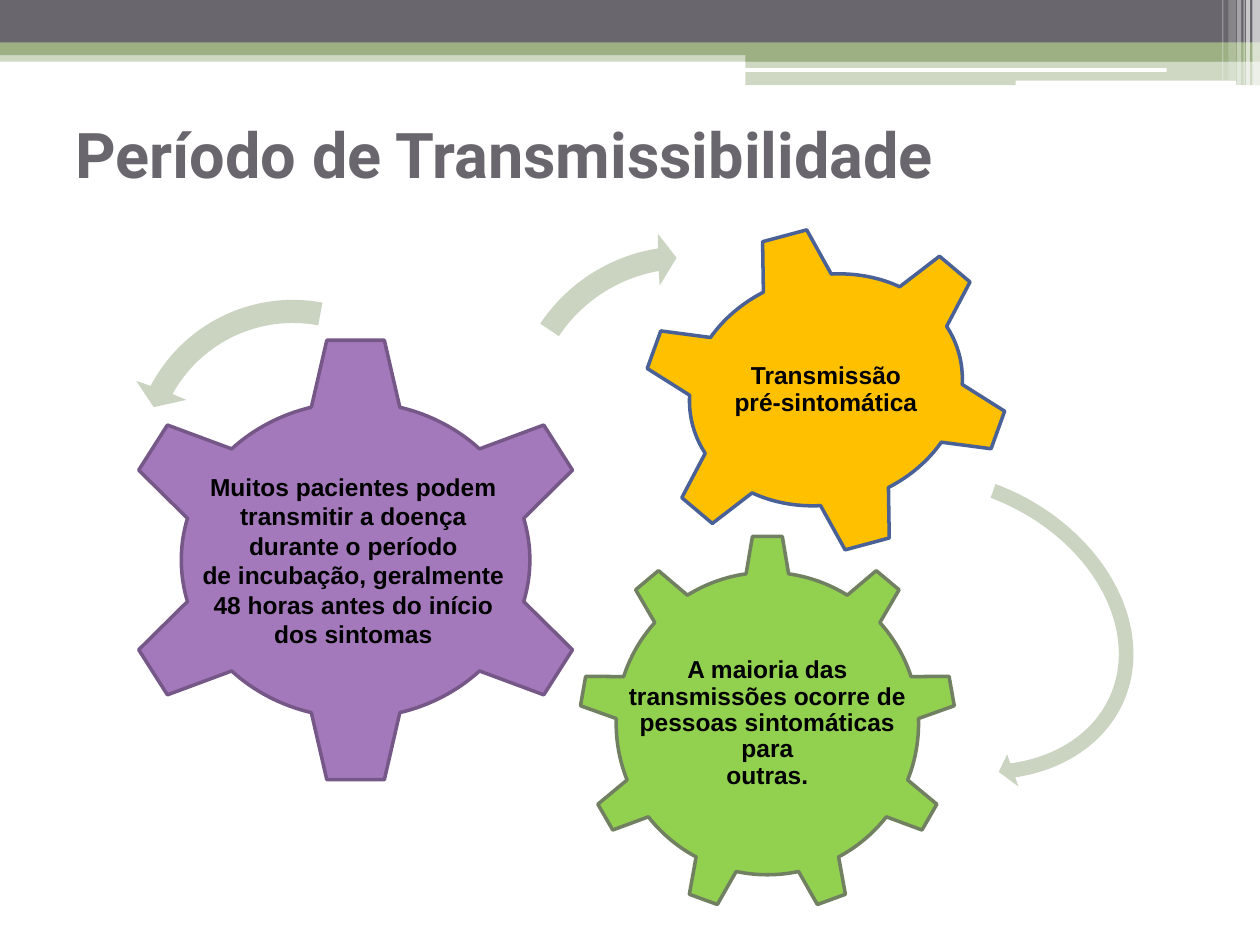
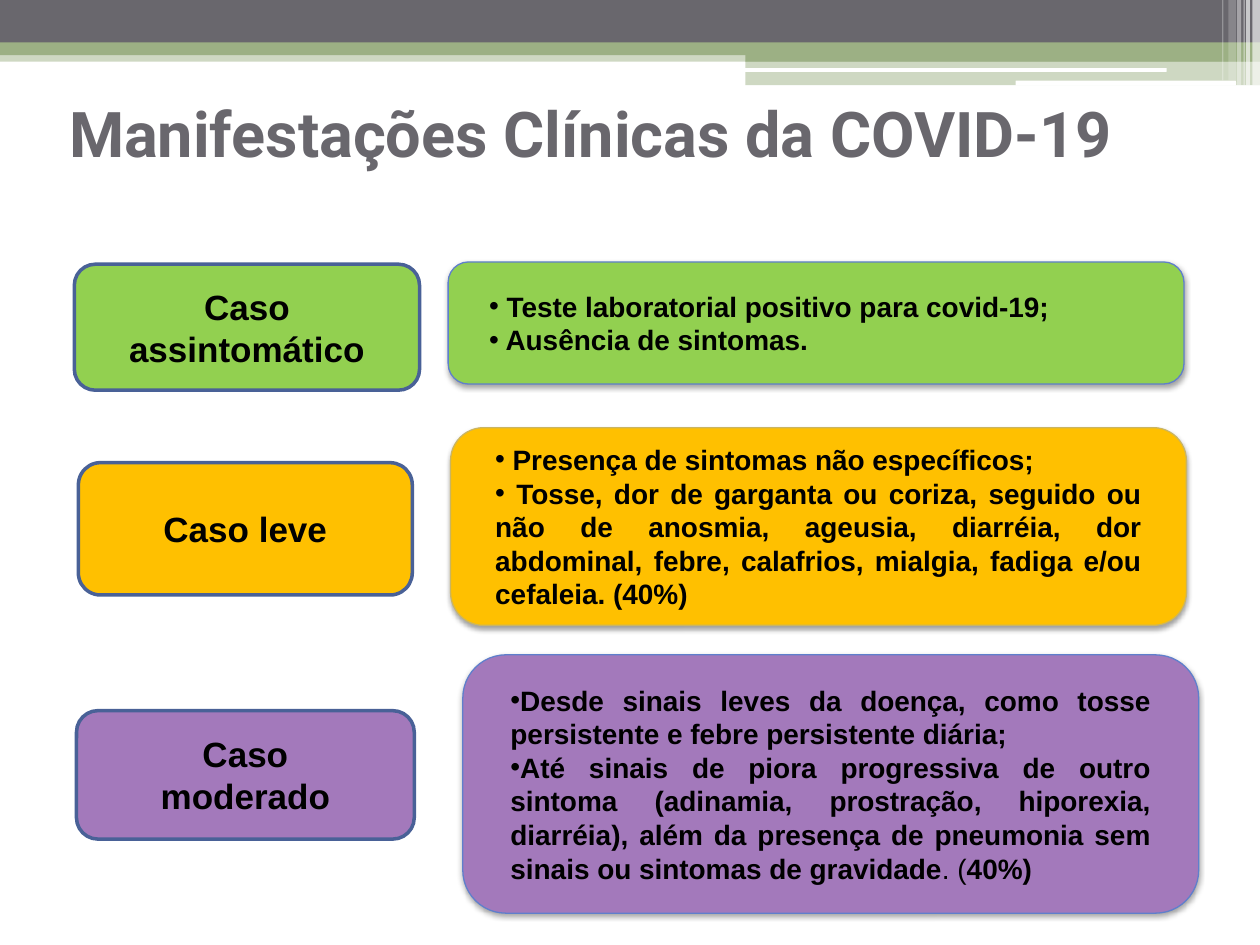
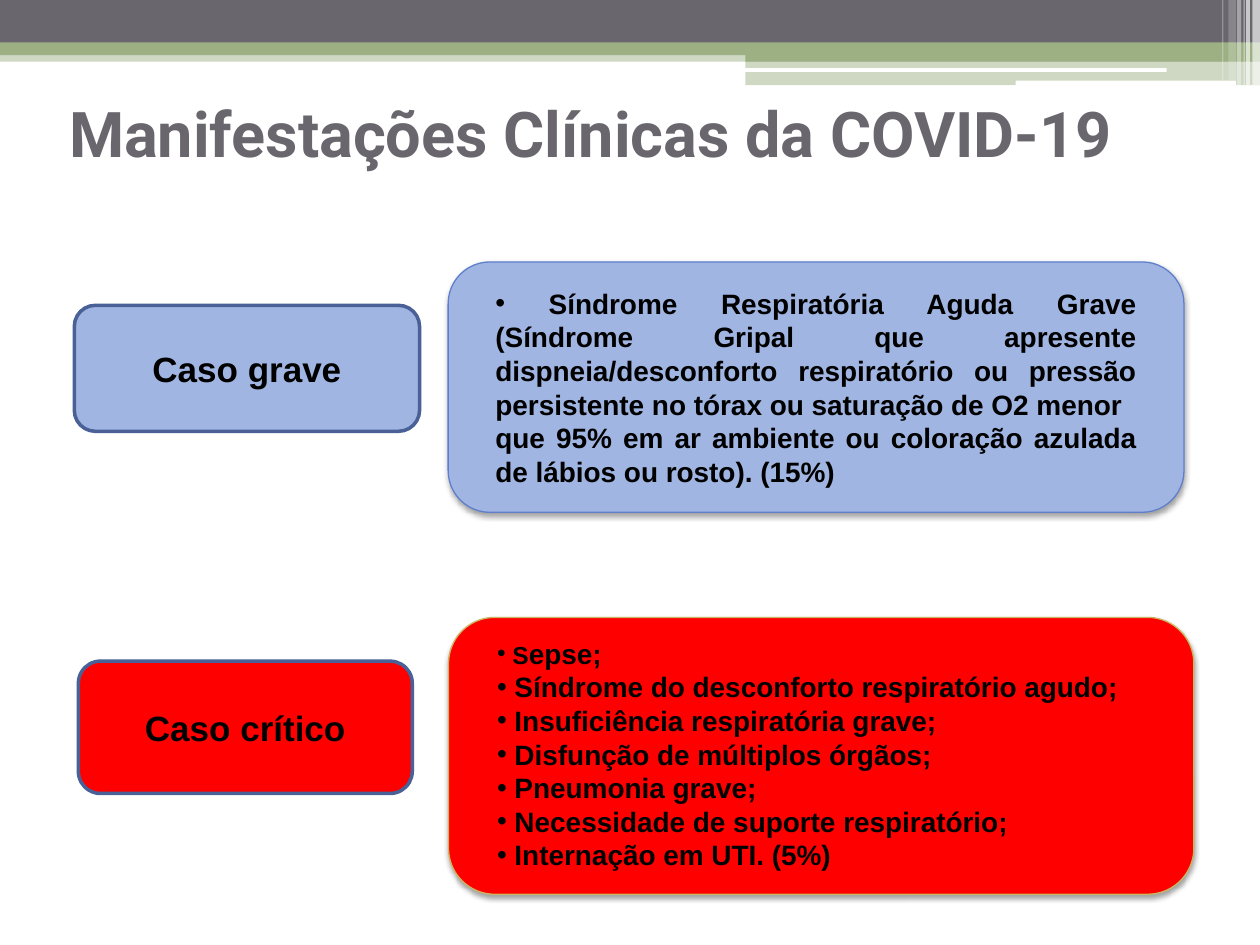
"""Build three slides on COVID-19 transmissibility and clinical manifestations."""
from math import ceil, cos, hypot, radians, sin, tan

from lxml import etree
from pptx import Presentation
from pptx.dml.color import RGBColor
from pptx.enum.shapes import MSO_SHAPE
from pptx.enum.text import MSO_ANCHOR, PP_ALIGN
from pptx.oxml.ns import qn
from pptx.util import Pt

RECTANGLE = MSO_SHAPE.RECTANGLE
ROUNDED = MSO_SHAPE.ROUNDED_RECTANGLE
MIDDLE = MSO_ANCHOR.MIDDLE
LEFT, CENTER, JUSTIFY = PP_ALIGN.LEFT, PP_ALIGN.CENTER, PP_ALIGN.JUSTIFY

BLACK = RGBColor(0x00, 0x00, 0x00)
WHITE = RGBColor(0xFF, 0xFF, 0xFF)
GRAY = RGBColor(0x69, 0x67, 0x6D)
SAGE = RGBColor(0x9C, 0xB0, 0x84)
PALE_SAGE = RGBColor(0xCB, 0xD4, 0xC1)
GREEN = RGBColor(0x92, 0xD0, 0x50)
DARK_GREEN = RGBColor(0x71, 0x80, 0x60)
PURPLE = RGBColor(0xA3, 0x79, 0xBB)
DARK_PURPLE = RGBColor(0x76, 0x58, 0x88)
AMBER = RGBColor(0xFF, 0xC0, 0x00)
RED = RGBColor(0xFF, 0x00, 0x00)
LIGHT_BLUE = RGBColor(0xA0, 0xB5, 0xE2)
NAVY = RGBColor(0x49, 0x61, 0x97)
BLUE = RGBColor(0x5F, 0x7F, 0xCC)
SAND = RGBColor(0xCB, 0xB5, 0x60)

TITLE_FONT, BODY_FONT = "Roboto", "Arial"


def paint(shape, fill, line=None, width=2, opacity=100):
    """Give a shape its fill, outline and opacity, without a shadow."""
    shape.shadow.inherit = False
    shape.fill.solid()
    shape.fill.fore_color.rgb = fill
    if opacity < 100:
        color = shape.element.spPr.find(qn("a:solidFill"))[0]
        etree.SubElement(color, qn("a:alpha"), val=str(opacity * 1000))
    if line is None:
        shape.line.fill.background()
    else:
        shape.line.color.rgb = line
        shape.line.width = Pt(width)


def write(shape, texts, size, align, inset, font=BODY_FONT, color=BLACK, spacing=1.0):
    """Fill a shape with bold paragraphs; "•" opens a bullet and "|" parts spans."""
    frame = shape.text_frame
    frame.word_wrap = True
    frame.vertical_anchor = MIDDLE
    frame.margin_left = frame.margin_right = Pt(inset[0])
    frame.margin_top = frame.margin_bottom = Pt(inset[1])
    for index, text in enumerate(texts):
        para = frame.add_paragraph() if index else frame.paragraphs[0]
        para.alignment = align
        para.line_spacing = spacing
        if text.startswith("•"):
            properties = para._p.get_or_add_pPr()
            properties.set("marL", "0")
            properties.set("indent", "0")
            bullet_color = etree.SubElement(properties, qn("a:buClr"))
            etree.SubElement(bullet_color, qn("a:srgbClr"), val=str(BLACK))
            etree.SubElement(properties, qn("a:buFont"), typeface=BODY_FONT)
            etree.SubElement(properties, qn("a:buChar"), char="•")
            text = text[1:]
        for part in text.split("|"):
            span = para.add_run()
            span.text = part
            span.font.name = font
            span.font.size = Pt(size)
            span.font.bold = True
            span.font.color.rgb = color
    return frame


deck = Presentation()
deck.slide_width, deck.slide_height = Pt(720), Pt(540)

bands = [
    (RECTANGLE, 0, 28.8, 720, 6.5, SAGE, 49),
    (RECTANGLE, 0, 0, 720, 24.5, GRAY, 100),
    (RECTANGLE, 0, 24.3, 720, 7.2, SAGE, 100),
    (RECTANGLE, 426, 28.1, 294, 7.2, SAGE, 100),
    (RECTANGLE, 426, 34.6, 294, 14.1, SAGE, 49),
    (ROUNDED, 425.5, 38.9, 241.2, 2.2, WHITE, 100),
    (ROUNDED, 580.3, 46.1, 126, 2.9, WHITE, 100),
    (RECTANGLE, 715.7, 0, 4.3, 49, WHITE, 64),
    (RECTANGLE, 712.1, 0, 2.2, 49, WHITE, 64),
    (RECTANGLE, 710.6, 0, 0.7, 49, WHITE, 60),
    (RECTANGLE, 707, 0, 2.2, 49, WHITE, 40),
    (RECTANGLE, 702, 0, 4.3, 46, WHITE, 20),
    (RECTANGLE, 698.4, 0, 0.7, 46, WHITE, 29),
]
titles = [
    ("Período de Transmissibilidade", 36, 60.5, 604.8),
    ("Manifestações Clínicas da COVID-19", 32.4, 48.2, 634.3),
    ("Manifestações Clínicas da COVID-19", 32.4, 48.2, 634.3),
]
pages = []
for title, left, top, width in titles:
    page = deck.slides.add_slide(deck.slide_layouts[6])
    for kind, x, y, band_width, height, fill, opacity in bands:
        band = page.shapes.add_shape(kind, Pt(x), Pt(y), Pt(band_width), Pt(height))
        paint(band, fill, opacity=opacity)
    box = page.shapes.add_textbox(Pt(left), Pt(top), Pt(width), Pt(54.7))
    write(box, [title], 36, LEFT, (7.2, 3.6), TITLE_FONT, GRAY)
    pages.append(page)

outlines = []
gears = [
    (438.5, 413.5, 86.4, 86.4, 21.4, 9, 8.1, 0.7, 0, GREEN, DARK_GREEN),
    (203.2, 320, 99.6, 90.2, 38.3, 6, 14.7, 0.65, 0, PURPLE, DARK_PURPLE),
    (472, 222.8, 78.8, 65.3, 28, 6, 14.75, 0.65, -15, AMBER, NAVY),
]
for x, y, radius_x, radius_y, depth, teeth, spread, taper, turn, fill, line in gears:
    steps = []
    pitch = 360 / teeth
    for tooth in range(teeth):
        middle = tooth * pitch - 90
        first, last = [(radius_x * cos(radians(a)), radius_y * sin(radians(a)))
                       for a in (middle - spread, middle + spread)]
        normal_x = cos(radians(middle)) / radius_x
        normal_y = sin(radians(middle)) / radius_y
        reach = depth / hypot(normal_x, normal_y)
        center_x, center_y = (first[0] + last[0]) / 2, (first[1] + last[1]) / 2
        tips = [(center_x + (px - center_x) * taper + normal_x * reach,
                 center_y + (py - center_y) * taper + normal_y * reach)
                for px, py in (first, last)]
        if tooth == 0:
            steps.append(first)
        steps += [*tips, last,
                  (radius_x, radius_y, middle + spread, middle + pitch - spread)]
    outlines.append((steps, x, y, turn, fill, line))

arrows = [
    (542.9, 356.8, 104.4, 79.9, 4.2, 24.4, -95, 50, 54.8, -0.04),
    (167.4, 263.2, 85.2, 85.2, 6.6, 0, 280.6, 208.3, 201, -0.09),
    (391.3, 240.1, 92.9, 92.9, 6.4, 0, 213.7, 260.6, 267.1, 0.08),
]
for x, y, radius_x, radius_y, half, turn, start, end, tip, lean in arrows:
    wing = 2.3 * half
    rim = [(start, half), (end + lean * wing, wing), (tip, 0),
           (end - lean * wing, -wing), (end - lean * half, -half)]
    steps = [((radius_x + offset) * cos(radians(angle)),
              (radius_y + offset) * sin(radians(angle))) for angle, offset in rim]
    steps.insert(1, (radius_x + half, radius_y + half, start, end + lean * half))
    steps.append((radius_x - half, radius_y - half, end - lean * half, start))
    outlines.append((steps, x, y, turn, PALE_SAGE, None))

for steps, x, y, turn, fill, line in outlines:
    points, curves = [], []
    for step in steps:
        if len(step) == 2:
            points.append(step)
            continue
        radius_x, radius_y, start, end = step
        count = ceil(abs(end - start) / 90)
        sweep = radians(end - start) / count
        pull = 4 / 3 * tan(sweep / 4)
        for part in range(count):
            a = radians(start) + part * sweep
            b = a + sweep
            curves.append(len(points) - 1)
            points += [(radius_x * (cos(a) - pull * sin(a)), radius_y * (sin(a) + pull * cos(a))),
                       (radius_x * (cos(b) + pull * sin(b)), radius_y * (sin(b) - pull * cos(b))),
                       (radius_x * cos(b), radius_y * sin(b))]
    turn_cos, turn_sin = cos(radians(turn)), sin(radians(turn))
    corners = [(Pt(x + px * turn_cos - py * turn_sin), Pt(y + px * turn_sin + py * turn_cos))
               for px, py in points]
    builder = pages[0].shapes.build_freeform(*corners[0])
    builder.add_line_segments(corners[1:])
    shape = builder.convert_to_shape()
    segments = list(shape.element.spPr.iter(qn("a:lnTo")))
    for index in curves:
        curve = etree.Element(qn("a:cubicBezTo"))
        segments[index].addprevious(curve)
        for segment in segments[index:index + 3]:
            curve.append(segment[0])
            segment.getparent().remove(segment)
    paint(shape, fill, line)

gear_texts = [
    (349.2, 305.5, 178.6, 216, 0.9,
     ["A maioria das transmissões ocorre de pessoas sintomáticas para", "outras."]),
    (108.7, 191.2, 186.5, 257.8, 1.0,
     ["Muitos pacientes podem transmitir a doença durante o período",
      "de incubação, geralmente 48 horas antes do início dos sintomas"]),
    (413.7, 168.9, 116.6, 108, 0.9, ["Transmissão pré-sintomática"]),
]
for left, top, width, height, spacing, texts in gear_texts:
    box = pages[0].shapes.add_textbox(Pt(left), Pt(top), Pt(width), Pt(height))
    write(box, texts, 14, CENTER, (1.4, 1.4), spacing=spacing)

cases = [
    (1, "Caso assintomático", (42.5, 151, 197.3, 72), (256.1, 149.7, 420.5, 69.8),
     GREEN, BLUE,
     ["• Teste laboratorial positivo para covid-19;", "• Ausência de sintomas."]),
    (1, "Caso leve", (44.8, 264.4, 190.8, 75.6), (257.5, 244.4, 420.5, 113),
     AMBER, SAND,
     ["• Presença de sintomas não específicos;",
      "• Tosse, dor de garganta ou coriza, seguido ou não de anosmia, ageusia, diarréia, "
      "dor abdominal, febre, calafrios, mialgia, fadiga e/ou cefaleia. (40%)"]),
    (1, "Caso moderado", (43.7, 406.1, 193, 73.4), (264.5, 374.2, 420.5, 147.6),
     PURPLE, BLUE,
     ["•Desde sinais leves da doença, como tosse persistente e febre persistente diária;",
      "•Até sinais de piora progressiva de outro sintoma (adinamia, prostração, hiporexia, "
      "diarréia), além da presença de pneumonia sem sinais ou sintomas de gravidade|. (|40%)"]),
    (2, "Caso grave", (42.5, 174.5, 197.3, 72), (256.1, 149.7, 420.5, 143.1),
     LIGHT_BLUE, BLUE,
     ["• Síndrome Respiratória Aguda Grave (Síndrome Gripal que apresente "
      "dispneia/desconforto respiratório ou pressão persistente no tórax ou saturação "
      "de O2 menor",
      "que 95% em ar ambiente ou coloração azulada de lábios ou rosto). (15%)"]),
    (2, "Caso crítico", (44.8, 377.8, 190.8, 75.6), (256.3, 352.8, 425.9, 158.2),
     RED, SAND,
     ["• S|epse;", "• Síndrome do desconforto respiratório agudo;",
      "• Insuficiência respiratória grave;", "• Disfunção de múltiplos órgãos;",
      "• Pneumonia grave;", "• Necessidade de suporte respiratório;",
      "• Internação em UTI. (5%)"]),
]
details = {}
for number, name, label_place, card_place, fill, line, texts in cases:
    shapes = pages[number].shapes
    label = shapes.add_shape(ROUNDED, *map(Pt, label_place))
    paint(label, fill, NAVY)
    write(label, [name], 20, CENTER, (20.2, 20.2))
    card = shapes.add_shape(ROUNDED, *map(Pt, card_place))
    paint(card, fill, line, 0.75)
    effects = card.element.spPr.find(qn("a:effectLst"))
    shadow = etree.SubElement(effects, qn("a:outerShdw"), blurRad=str(Pt(3.1)),
                              dist=str(Pt(1.6)), dir="5400000", rotWithShape="0")
    shadow_color = etree.SubElement(shadow, qn("a:srgbClr"), val=str(BLACK))
    etree.SubElement(shadow_color, qn("a:alpha"), val="37000")
    details[name] = write(card, texts, 16, JUSTIFY, (20, 20.2))

details["Caso assintomático"].paragraphs[0].alignment = LEFT
details["Caso assintomático"].paragraphs[1].alignment = LEFT
details["Caso moderado"].paragraphs[1].runs[1].font.bold = False
details["Caso crítico"].paragraphs[0].runs[0].font.size = Pt(14)
details["Caso crítico"].margin_bottom = Pt(22.4)

deck.save("out.pptx")
